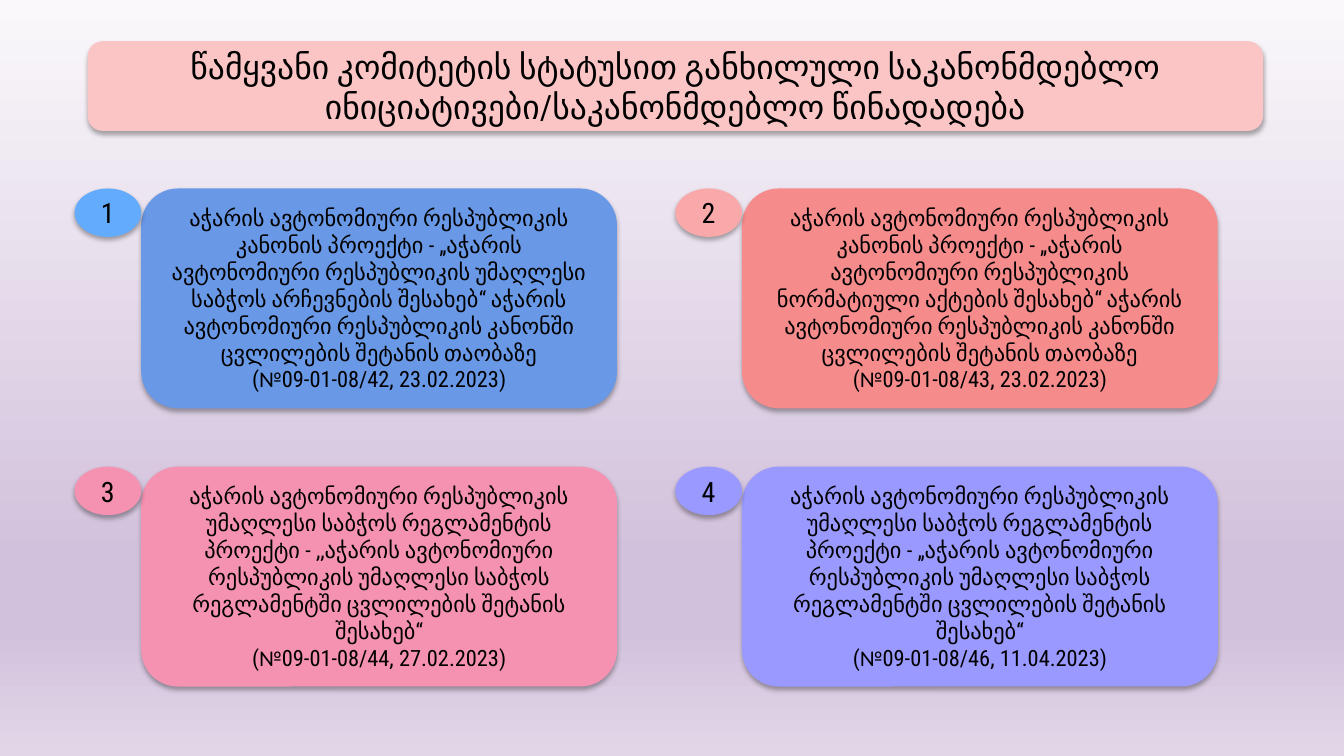
from pptx import Presentation
from pptx.dml.color import RGBColor
from pptx.enum.shapes import MSO_SHAPE
from pptx.enum.text import MSO_ANCHOR, PP_ALIGN
from pptx.oxml import parse_xml
from pptx.oxml.ns import nsdecls
from pptx.util import Cm, Pt

ROUND, OVAL = MSO_SHAPE.ROUNDED_RECTANGLE, MSO_SHAPE.OVAL
MIDDLE, CENTER = MSO_ANCHOR.MIDDLE, PP_ALIGN.CENTER

BLACK = RGBColor(0x00, 0x00, 0x00)
BLUSH = RGBColor(0xFB, 0xC5, 0xC5)
BLUE = RGBColor(0x68, 0x98, 0xE6)
SKY = RGBColor(0x63, 0xAC, 0xFD)
CORAL = RGBColor(0xF6, 0x8B, 0x8C)
SALMON = RGBColor(0xF9, 0xA9, 0xA9)
PINK = RGBColor(0xF6, 0x92, 0xB1)
VIOLET = RGBColor(0x99, 0x99, 0xFF)
PALE = RGBColor(0xFA, 0xF8, 0xFB)
LILAC = RGBColor(0xD2, 0xC1, 0xDC)
MIST = RGBColor(0xE1, 0xD6, 0xE8)
STOPS = [(0, PALE), (74, LILAC), (83, LILAC), (100, MIST)]

FONT, SIGN = "Roboto Condensed", "Calibri"
TITLE = ("წამყვანი კომიტეტის სტატუსით განხილული საკანონმდებლო "
         "ინიციატივები/საკანონმდებლო წინადადება")

# Card colour, badge colour, text, number and date
CARDS = [
    (BLUE, SKY,
     "აჭარის ავტონომიური რესპუბლიკის კანონის პროექტი - „აჭარის ავტონომიური "
     "რესპუბლიკის უმაღლესი საბჭოს არჩევნების შესახებ“ აჭარის ავტონომიური "
     "რესპუბლიკის კანონში ცვლილების შეტანის თაობაზე",
     "09-01-08/42, 23.02.2023)"),
    (CORAL, SALMON,
     "აჭარის ავტონომიური რესპუბლიკის კანონის პროექტი - „აჭარის ავტონომიური "
     "რესპუბლიკის ნორმატიული აქტების შესახებ“ აჭარის ავტონომიური "
     "რესპუბლიკის კანონში ცვლილების შეტანის თაობაზე",
     "09-01-08/43, 23.02.2023)"),
    (PINK, PINK,
     "აჭარის ავტონომიური რესპუბლიკის უმაღლესი საბჭოს რეგლამენტის პროექტი - "
     ",,აჭარის ავტონომიური რესპუბლიკის უმაღლესი საბჭოს რეგლამენტში "
     "ცვლილების შეტანის შესახებ“",
     "09-01-08/44, 27.02.2023)"),
    (VIOLET, VIOLET,
     "აჭარის ავტონომიური რესპუბლიკის უმაღლესი საბჭოს რეგლამენტის პროექტი - "
     "„აჭარის ავტონომიური რესპუბლიკის უმაღლესი საბჭოს რეგლამენტში "
     "ცვლილების შეტანის შესახებ“",
     "09-01-08/46, 11.04.2023)"),
]

# Grid of cards and badges, in centimetres
LEFT, TOP = 3.56, 4.75
STEP_X, STEP_Y = 15.14, 7.01
CARD_W, CARD_H = 11.99, 5.54
BADGE_W, BADGE_H = 1.68, 1.22


def paint_back(slide):
    """Fill the background with a vertical gradient."""
    fill = slide.background.fill
    fill.gradient()
    fill.gradient_angle = 270
    stops = "".join(
        f'<a:gs pos="{pos * 1000}"><a:srgbClr val="{color}"/></a:gs>'
        for pos, color in STOPS)
    old = slide.element.xpath(".//p:bg//a:gsLst")[0]
    new = parse_xml(f'<a:gsLst {nsdecls("a")}>{stops}</a:gsLst>')
    old.getparent().replace(old, new)


def add_shade(shape):
    """Give the shape a soft shadow below it."""
    shape.shadow.inherit = False
    props = shape.element.spPr
    props.remove(props.xpath("./a:effectLst")[0])
    props.append(parse_xml(
        f'<a:effectLst {nsdecls("a")}>'
        f'<a:outerShdw blurRad="{Pt(3.5)}" dist="{Pt(2.2)}" dir="5400000" '
        'algn="ctr" rotWithShape="0"><a:srgbClr val="000000">'
        '<a:alpha val="32000"/></a:srgbClr></a:outerShdw></a:effectLst>'))


def add_block(slide, kind, box, color, size, lines):
    """Draw a filled shape; each line is a list of (text, font) runs."""
    shape = slide.shapes.add_shape(kind, *[Cm(n) for n in box])
    shape.fill.solid()
    shape.fill.fore_color.rgb = color
    shape.line.fill.background()
    add_shade(shape)
    frame = shape.text_frame
    frame.word_wrap = True
    frame.vertical_anchor = MIDDLE
    for i, line in enumerate(lines):
        para = frame.add_paragraph() if i else frame.paragraphs[0]
        para.alignment = CENTER
        for text, face in line:
            run = para.add_run()
            run.text = text
            run.font.name = face
            run.font.size = Pt(size)
            run.font.color.rgb = BLACK


def add_card(slide, index, card):
    """Draw one card with its numbered badge."""
    color, tint, text, ref = card
    row, col = divmod(index, 2)
    x, y = LEFT + col * STEP_X, TOP + row * STEP_Y
    add_block(slide, ROUND, (x, y, CARD_W, CARD_H), color, 16,
              [[(text, FONT)], [("(", FONT), ("№", SIGN), (ref, FONT)]])
    add_block(slide, OVAL, (x - BADGE_W, y, BADGE_W, BADGE_H), tint, 20,
              [[(str(index + 1), FONT)]])


def main():
    deck = Presentation()
    deck.slide_width, deck.slide_height = Cm(33.87), Cm(19.05)
    slide = deck.slides.add_slide(deck.slide_layouts[6])
    paint_back(slide)

    # Title bar
    add_block(slide, ROUND, (2.21, 1.04, 29.62, 2.26), BLUSH, 24,
              [[(TITLE, FONT)]])

    # Four cards, two in a row
    for index, card in enumerate(CARDS):
        add_card(slide, index, card)

    deck.save("out.pptx")


if __name__ == "__main__":
    main()
